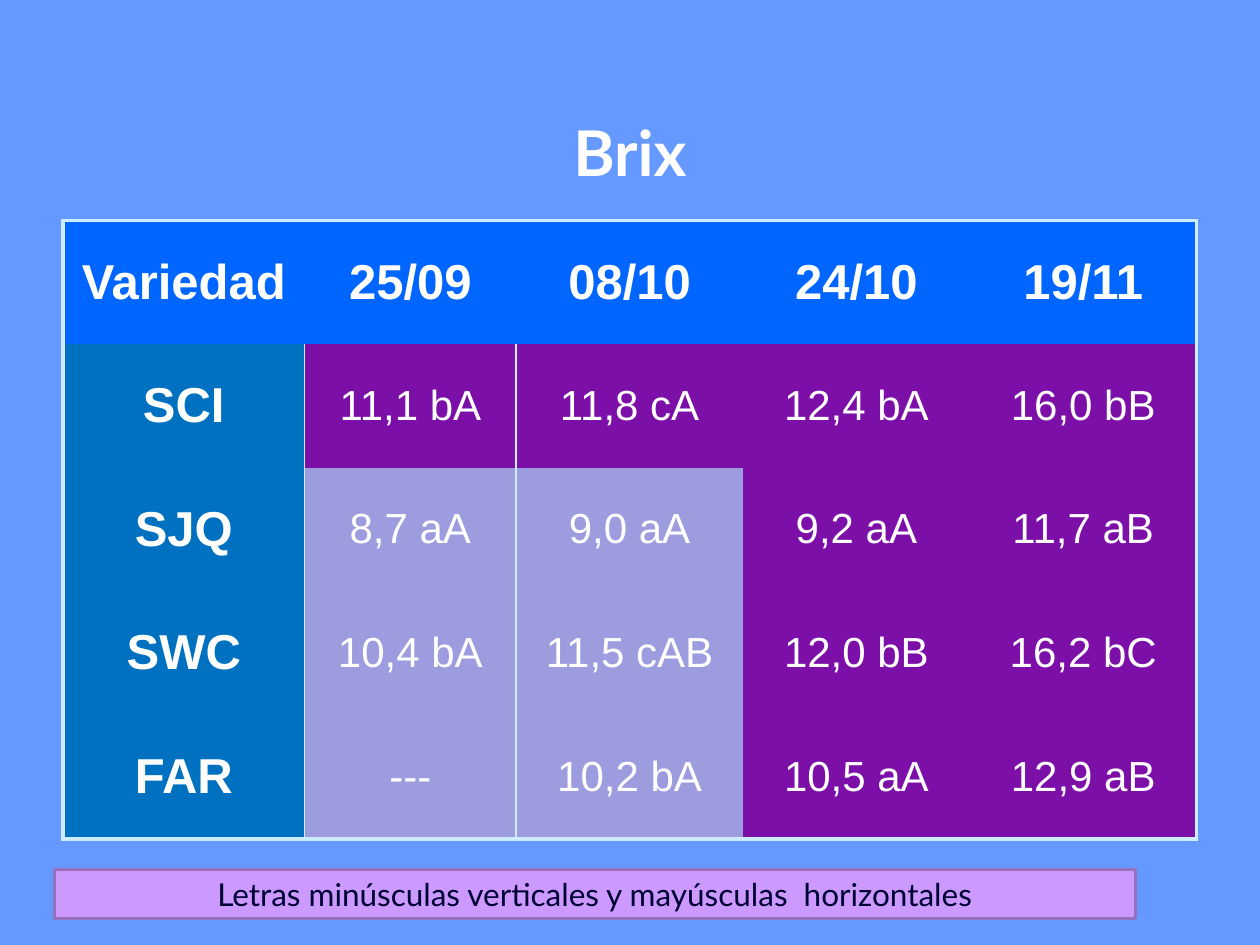
from lxml import etree
from pptx import Presentation
from pptx.dml.color import RGBColor
from pptx.enum.shapes import MSO_SHAPE
from pptx.enum.text import MSO_ANCHOR, PP_ALIGN
from pptx.oxml.ns import qn
from pptx.util import Pt

CENTER = PP_ALIGN.CENTER
MIDDLE, BOTTOM = MSO_ANCHOR.MIDDLE, MSO_ANCHOR.BOTTOM
RECT = MSO_SHAPE.RECTANGLE
TITLE_ONLY = 5
NO_STYLE = "{2D5ABB26-0587-4C30-8999-92F81FD0307C}"

WHITE, NAVY, PALE = "FFFFFF", "000033", "CCECFF"
BLUE, TEAL, PURPLE, LILAC = "0066FF", "0070C0", "7D0FA9", "9C9CDF"

ROWS = [
    ["Variedad", "25/09", "08/10", "24/10", "19/11"],
    ["SCI", "11,1 bA", "11,8 cA", "12,4 bA", "16,0 bB"],
    ["SJQ", "8,7 aA", "9,0 aA", "9,2 aA", "11,7 aB"],
    ["SWC", "10,4 bA", "11,5 cAB", "12,0 bB", "16,2 bC"],
    ["FAR", "---", "10,2 bA", "10,5 aA", "12,9 aB"],
]
COL_WIDTHS = [138, 121, 129.6, 129.6, 129.6]
ROW_HEIGHTS = [70.5, 71, 70, 71, 71]


def rgb(color):
    return RGBColor.from_string(color)


def write(tf, text, font="Arial", size=24, color=WHITE, bold=False, anchor=MIDDLE):
    tf.word_wrap = True
    tf.vertical_anchor = anchor
    p = tf.paragraphs[0]
    p.alignment = CENTER
    r = p.add_run()
    r.text = text
    r.font.name, r.font.size, r.font.bold = font, Pt(size), bold
    r.font.color.rgb = rgb(color)


def cell_fill(row, col):
    if row == 0:
        return BLUE
    if col == 0:
        return TEAL
    return LILAC if row > 1 and col < 3 else PURPLE


def cell_borders(row, col, last_row, last_col):
    """Border widths by side, in the order the schema asks for."""
    body = row > 0
    widths = {
        "L": 2.25 if col == 0 else 1 if body and col == 1 else 0,
        "R": 2.25 if col == last_col else 1 if body and col == 0 else 0,
        "T": 2.25 if row == 0 else 0,
        "B": 2.25 if row == last_row else 0,
    }
    return {side: width for side, width in widths.items() if width}


class Deck:
    def __init__(self, width, height, background, font):
        self.prs = Presentation()
        self.prs.slide_width, self.prs.slide_height = Pt(width), Pt(height)
        self.font = font
        self.s = self.prs.slides.add_slide(self.prs.slide_layouts[TITLE_ONLY])
        fill = self.s.background.fill
        fill.solid()
        fill.fore_color.rgb = rgb(background)

    def title(self, text, x, y, w, h):
        sp = self.s.shapes.title
        sp.left, sp.top, sp.width, sp.height = Pt(x), Pt(y), Pt(w), Pt(h)
        write(sp.text_frame, text, font=self.font, size=36, bold=True, anchor=BOTTOM)

    def border(self, cell, side, width):
        tc_pr = cell._tc.get_or_add_tcPr()
        ln = etree.SubElement(tc_pr, qn(f"a:ln{side}"), w=str(Pt(width)))
        fill = etree.SubElement(ln, qn("a:solidFill"))
        etree.SubElement(fill, qn("a:srgbClr"), val=PALE)

    def table(self, rows, x, y, widths, heights):
        frame = self.s.shapes.add_table(len(rows), len(widths), Pt(x), Pt(y),
                                        Pt(sum(widths)), Pt(sum(heights)))
        table = frame.table
        table._tbl.tblPr.find(qn("a:tableStyleId")).text = NO_STYLE
        for column, width in zip(table.columns, widths):
            column.width = Pt(width)
        for row, height in zip(table.rows, heights):
            row.height = Pt(height)
        for i, values in enumerate(rows):
            for j, value in enumerate(values):
                cell = table.cell(i, j)
                heading = i == 0 or j == 0
                write(cell.text_frame, value, size=28 if heading else 24, bold=heading)
                cell.vertical_anchor = MIDDLE
                # Borders go before the fill in the cell properties
                borders = cell_borders(i, j, len(rows) - 1, len(values) - 1)
                for side, width in borders.items():
                    self.border(cell, side, width)
                cell.fill.solid()
                cell.fill.fore_color.rgb = rgb(cell_fill(i, j))

    def box(self, text, x, y, w, h, fill, line):
        sp = self.s.shapes.add_shape(RECT, Pt(x), Pt(y), Pt(w), Pt(h))
        sp.shadow.inherit = False
        sp.fill.solid()
        sp.fill.fore_color.rgb = rgb(fill)
        sp.line.color.rgb = rgb(line)
        sp.line.width = Pt(2)
        write(sp.text_frame, text, font=self.font, size=18, color=NAVY)


def main():
    deck = Deck(720, 540, background="6699FF", font="Lato")
    deck.title("Brix", 36, 21.6, 648, 90)
    # Brix by variety and date
    deck.table(ROWS, 36, 126, COL_WIDTHS, ROW_HEIGHTS)
    # Key to the letters
    deck.box("Letras minúsculas verticales y mayúsculas  horizontales",
             31, 496.8, 617.8, 28.1, fill="CC99FF", line="9771BD")
    deck.prs.save("out.pptx")


if __name__ == "__main__":
    main()
